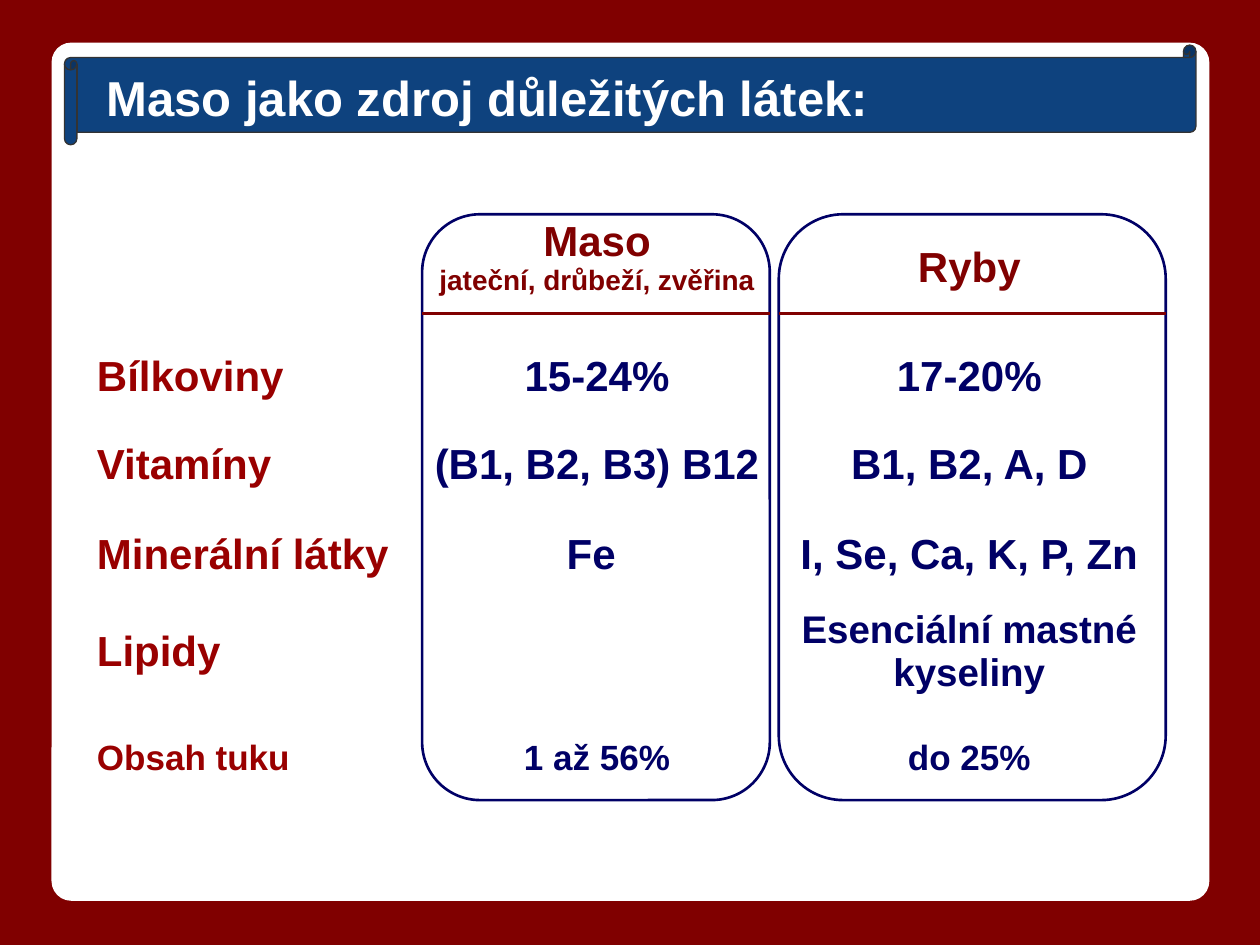
from dataclasses import dataclass
from lxml import etree
from pptx import Presentation
from pptx.dml.color import RGBColor as Rgb
from pptx.enum.shapes import MSO_CONNECTOR as Link, MSO_SHAPE as Form
from pptx.enum.text import MSO_ANCHOR as Anchor, PP_ALIGN as Align
from pptx.oxml.ns import qn
from pptx.util import Cm, Pt


@dataclass(frozen=True)
class Theme:
    font: str = "Arial"
    wine: str = "800000"
    red: str = "990000"
    navy: str = "000066"
    blue: str = "0E427E"
    dark: str = "333333"
    white: str = "FFFFFF"
    title: int = 28
    body: int = 24
    mid: int = 22
    small: int = 20
    note: int = 16
    rule: float = 1.5
    thin: float = 0.75
    plain: str = "{2D5ABB26-0587-4C30-8999-92F81FD0307C}"


class Deck:
    """Draws styled elements on the current slide."""

    def __init__(self, theme):
        self.theme = theme
        self.prs = Presentation()
        self.prs.slide_width, self.prs.slide_height = Cm(25.4), Cm(19.05)
        self.slide = None

    def page(self, color):
        self.slide = self.prs.slides.add_slide(self.prs.slide_layouts[6])
        self.paint(self.slide.background.fill, color)

    def paint(self, fill, color):
        if color:
            fill.solid()
            fill.fore_color.rgb = Rgb.from_string(color)
        else:
            fill.background()

    def shape(self, form, area, fill=None, line=None, width=0, bend=None):
        item = self.slide.shapes.add_shape(form, *map(Cm, area))
        item.shadow.inherit = False
        self.paint(item.fill, fill)
        self.paint(item.line.fill, line)
        if line:
            item.line.width = Pt(width)
        if bend is not None:
            item.adjustments[0] = bend

    def words(self, para, text, size, color, align=Align.LEFT):
        para.alignment = align
        run = para.add_run()
        run.text = text
        font = {"name": self.theme.font, "size": Pt(size), "bold": True}
        for key, val in font.items():
            setattr(run.font, key, val)
        run.font.color.rgb = Rgb.from_string(color)

    def label(self, area, text, size, color):
        frame = self.slide.shapes.add_textbox(*map(Cm, area)).text_frame
        frame.word_wrap = True
        for side in ("left", "top", "right", "bottom"):
            setattr(frame, f"margin_{side}", Cm(0.25))
        self.words(frame.paragraphs[0], text, size, color)

    def line(self, left, right, y, color):
        item = self.slide.shapes.add_connector(
            Link.STRAIGHT, Cm(left), Cm(y), Cm(right), Cm(y))
        item.line.width = Pt(self.theme.rule)
        self.paint(item.line.fill, color)
        etree.SubElement(item.element.spPr, qn("a:effectLst"))

    def table(self, left, top, cols, rows, cells):
        item = self.slide.shapes.add_table(
            len(rows), len(cols), *map(Cm, (left, top, sum(cols), sum(rows))))
        grid = item.table
        for key in ("first_row", "horz_banding"):
            setattr(grid, key, False)
        for node in item.element.iter(qn("a:tableStyleId")):
            node.text = self.theme.plain
        for col, wide in zip(grid.columns, cols):
            col.width = Cm(wide)
        for row, high in zip(grid.rows, rows):
            row.height = Cm(high)
        for i, vals in enumerate(cells):
            for j, lines in enumerate(vals):
                self.cell(grid.cell(i, j), lines, Align.CENTER if j else Align.LEFT)
        return grid

    def cell(self, cell, lines, align):
        self.paint(cell.fill, None)
        cell.vertical_anchor = Anchor.MIDDLE
        frame = cell.text_frame
        for i, (text, size, color) in enumerate(lines):
            para = frame.add_paragraph() if i else frame.paragraphs[0]
            self.words(para, text, size, color, align)


def main():
    look = Theme()
    deck = Deck(look)
    deck.page(look.wine)
    deck.shape(Form.ROUNDED_RECTANGLE, (1.04, 0.86, 23.34, 17.3), look.white, bend=0.023)
    top, high = 4.32, 11.81
    meat, fish = (8.51, 7.01), (15.7, 7.8)

    def frame(span):
        deck.shape(Form.FLOWCHART_ALTERNATE_PROCESS, (span[0], top, span[1], high),
                   line=look.navy, width=look.rule)

    frame(meat)
    deck.shape(Form.HORIZONTAL_SCROLL, (1.3, 0.91, 22.81, 2.01),
               look.blue, look.dark, look.thin, 0.125)
    deck.label((1.9, 1.12, 22, 1.4), "Maso jako zdroj důležitých látek:",
               look.title, look.white)

    big, mid, low = look.body, look.mid, look.small
    facts = [
        (("Bílkoviny", big), ("15-24%", big), ("17-20%", big)),
        (("Vitamíny", big), ("(B1, B2, B3) B12", big), ("B1, B2, A, D", big)),
        (("Minerální látky", big), ("Fe ", big), ("I, Se, Ca, K, P, Zn", big)),
        (("Lipidy", big), None, ("Esenciální mastné kyseliny", mid)),
        (("Obsah tuku", low), ("1 až 56%", low), ("do 25%", low)),
    ]
    inks = (look.red, look.navy, look.navy)
    head = [[], [("Maso", big, look.wine),
                 ("jateční, drůbeží, zvěřina", look.note, look.wine)],
            [("Ryby", big, look.wine)]]
    cells = [head] + [[[(*fact, ink)] if fact else [] for fact, ink in zip(row, inks)]
                      for row in facts]
    grid = deck.table(1.7, 4.11, (6.6, 7.47, 7.54),
                      (2.59, 1.78, 1.8, 1.8, 2.03, 2.16), cells)
    first = grid.cell(0, 1)
    first.vertical_anchor, first.margin_top = Anchor.TOP, Cm(0.29)

    frame(fish)
    for left, wide in (meat, fish):
        deck.line(left, left + wide, 6.32, look.wine)
    deck.prs.save("out.pptx")


if __name__ == "__main__":
    main()
